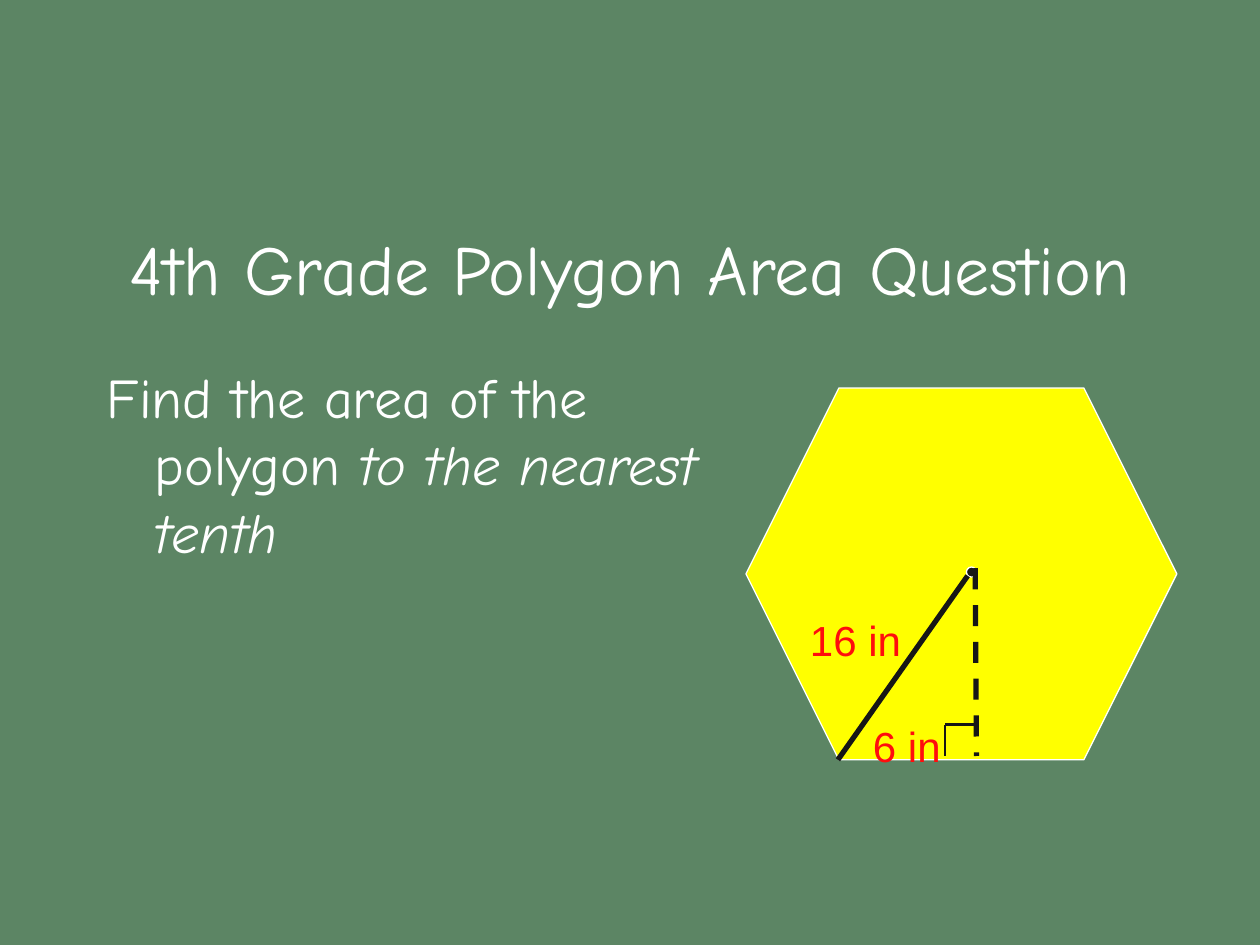
"""Build a slide asking for the area of a hexagon."""
from lxml import etree
from pptx import Presentation
from pptx.dml.color import RGBColor
from pptx.enum.dml import MSO_LINE
from pptx.enum.shapes import MSO_CONNECTOR, MSO_SHAPE
from pptx.enum.text import MSO_ANCHOR, PP_ALIGN
from pptx.oxml import parse_xml
from pptx.oxml.ns import nsdecls, qn
from pptx.util import Inches, Pt

DASH = MSO_LINE.DASH
LINE = MSO_CONNECTOR.STRAIGHT
HEXAGON, OVAL = MSO_SHAPE.HEXAGON, MSO_SHAPE.OVAL
MIDDLE, TOP = MSO_ANCHOR.MIDDLE, MSO_ANCHOR.TOP
CENTER, LEFT = PP_ALIGN.CENTER, PP_ALIGN.LEFT

HUES = {"board": "5C8564", "chalk": "FFFFFF", "fill": "FFFF00",
        "ink": "161616", "label": "FF0D0D", "shade": "808080"}
COLORS = {name: RGBColor.from_string(hue) for name, hue in HUES.items()}
SHADOW = (f'<a:effectLst {nsdecls("a")}><a:outerShdw dist="35921" dir="2700000">'
          f'<a:srgbClr val="{HUES["shade"]}"/></a:outerShdw></a:effectLst>')

deck = Presentation()
deck.slide_width, deck.slide_height = Inches(10), Inches(7.5)
slide = deck.slides.add_slide(deck.slide_layouts[6])
slide.background.fill.solid()
slide.background.fill.fore_color.rgb = COLORS["board"]
shapes = slide.shapes


def add_text(box, runs, size, face, color, anchor=TOP, align=LEFT):
    frame = shapes.add_textbox(*map(Inches, box)).text_frame
    frame.word_wrap = True
    frame.vertical_anchor = anchor
    para = frame.paragraphs[0]
    para.alignment = align
    para.font.size, para.font.name = Pt(size), face
    para.font.color.rgb = COLORS[color]
    for text, italic in runs:
        run = para.add_run()
        run.text = text
        if color == "chalk":
            run._r.get_or_add_rPr().append(parse_xml(SHADOW))
        if italic:
            run.font.italic = True
    return para


add_text((0.75, 1.5, 8.5, 1.25), [("4th Grade Polygon Area Question", False)],
         40, "Comic Neue", "chalk", MIDDLE, CENTER)

for kind, box, color in [
    (HEXAGON, (5.92, 3.08, 3.42, 2.95), "fill"),
    (OVAL, (7.67, 4.5, 0.08, 0.08), "ink"),
]:
    shape = shapes.add_shape(kind, *map(Inches, box))
    shape.shadow.inherit = False
    shape.fill.solid()
    shape.fill.fore_color.rgb = COLORS[color]
    shape.line.color.rgb = COLORS["chalk"]
    shape.line.width = Pt(0.75)

for ends, width, dash in [
    ((6.65, 6.03, 7.68, 4.57), 3, None),
    ((7.74, 4.51, 7.75, 6), 3, DASH),
    ((7.75, 5.75, 7.5, 5.75), 1.75, None),
    ((7.5, 5.75, 7.5, 6), 1.5, None),
]:
    line = shapes.add_connector(LINE, *map(Inches, ends))
    line.line.color.rgb = COLORS["ink"]
    line.line.width = Pt(width)
    if dash:
        line.line.dash_style = dash
    etree.SubElement(line._element.spPr, qn("a:effectLst"))

for left, top, text in [(6.33, 4.83, "16 in"), (6.83, 5.67, "6 in")]:
    add_text((left, top, 1.25, 0.5), [(text, False)], 24, "Arial", "label")

task = add_text((0.75, 2.83, 5.33, 3.83),
                [("Find the area of the polygon ", False),
                 ("to the nearest tenth", True)], 32, "Comic Neue", "chalk")
props = task._p.get_or_add_pPr()
props.set("marL", str(Inches(0.38)))
props.set("indent", str(Inches(-0.38)))

deck.save("out.pptx")
